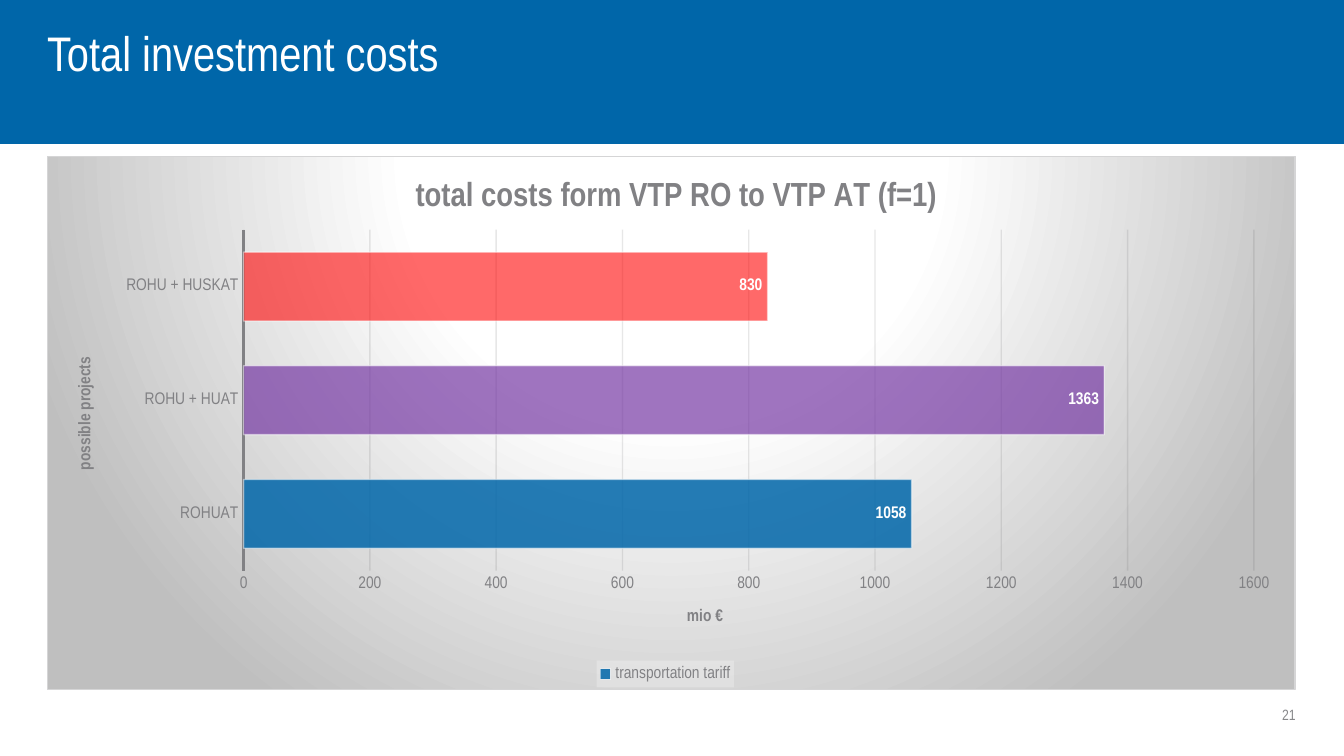
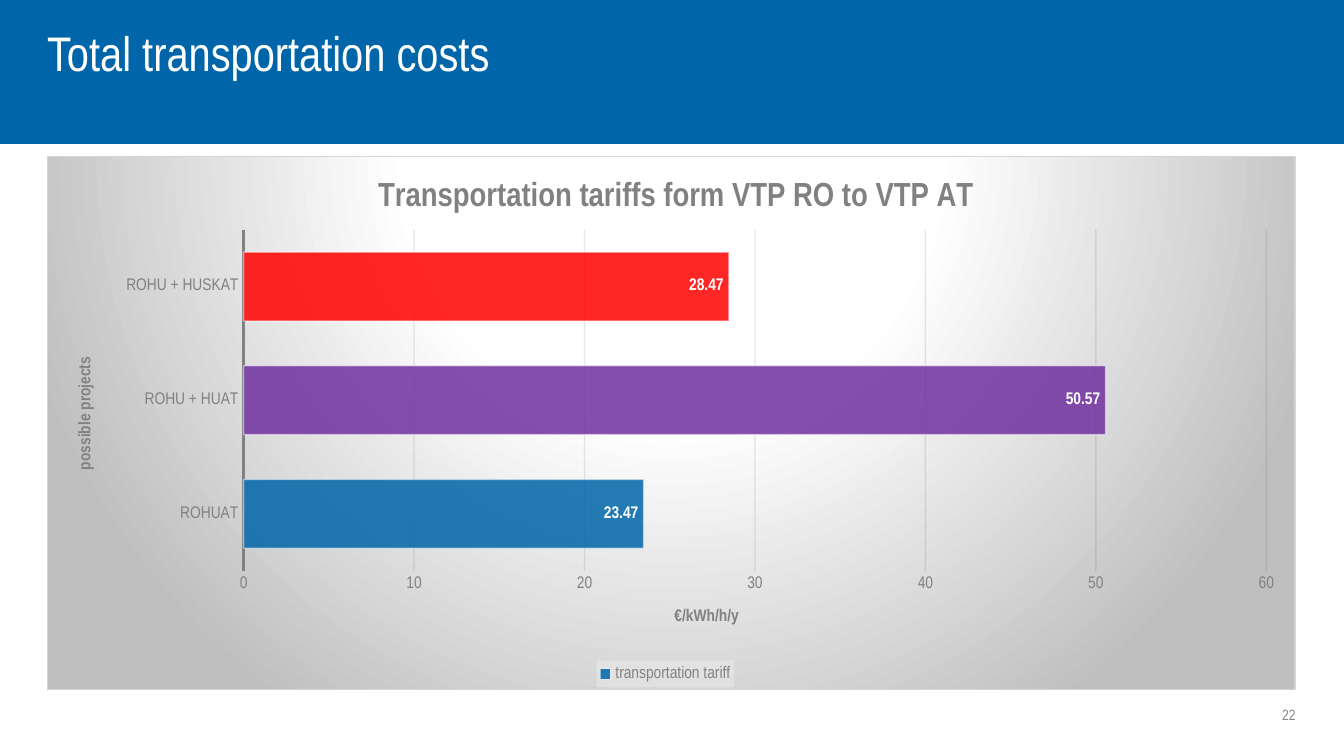
from dataclasses import dataclass
from typing import Any

from lxml import etree
from pptx import Presentation
from pptx import util as u
from pptx.chart import data as chart_data
from pptx.dml.color import RGBColor
from pptx.enum import chart as charts, shapes, text
from pptx.oxml import parse_xml
from pptx.oxml.ns import nsdecls, qn

COLOURS = {
    "blue": "0066A9", "purple": "7030A0", "red": "FF0000", "white": "FFFFFF",
    "number": "87888A", "chart text": "58585A", "label": "818184",
    "grid": "606062", "border": "D5D5D6", "shade": "BFBFBF", "legend": "F2F2F2",
}
FONT = "Arial Narrow"
PROJECTS = ("ROHUAT", "ROHU + HUAT", "ROHU + HUSKAT")
FIRST_NUMBER = 21
MARGIN, CONTENT_WIDTH = u.Cm(0.89), u.Cm(23.6)
FRAME = {"word_wrap": True, "vertical_anchor": text.MSO_ANCHOR.MIDDLE,
         "auto_size": text.MSO_AUTO_SIZE.NONE, "margin_left": 0,
         "margin_top": 0, "margin_right": 0, "margin_bottom": 0}


@dataclass
class Bar:
    value: float
    colour: str
    opacity: int


@dataclass
class CostSlide:
    title: str
    heading: str
    heading_left: float
    unit: str
    unit_left: float
    bars: tuple[Bar, ...]
    axis_max: int
    axis_step: int
    plot_width: float


COST_SLIDES = (
    CostSlide("Total investment costs", "total costs form VTP RO to VTP AT (f=1)", 0.29,
              "mio €", 0.51,
              (Bar(1058, "blue", 85), Bar(1363, "purple", 67), Bar(830, "red", 59)),
              1600, 200, 0.81),
    CostSlide("Total transportation costs", "Transportation tariffs form VTP RO to VTP AT", 0.26,
              "€/kWh/h/y", 0.5,
              (Bar(23.47, "blue", 85), Bar(50.57, "purple", 85), Bar(28.47, "red", 85)),
              60, 10, 0.82),
)


def apply(target: Any, values: dict[str, Any]) -> None:
    for name, value in values.items():
        setattr(target, name, value)


def style_font(font: Any, colour: str, size: float, bold: bool = False) -> None:
    apply(font, {"name": FONT, "size": u.Pt(size), "bold": bold})
    font.color.rgb = RGBColor.from_string(COLOURS[colour])


def paint(fill: Any, colour: str, opacity: int = 100) -> None:
    fill.solid()
    fill.fore_color.rgb = RGBColor.from_string(COLOURS[colour])
    if opacity < 100:
        rgb = fill._xPr.find(qn("a:solidFill"))[0]
        etree.SubElement(rgb, qn("a:alpha")).set("val", str(opacity * 1000))


def paint_line(line: Any, colour: str, width: float, opacity: int = 100) -> None:
    paint(line.fill, colour, opacity)
    line.width = u.Pt(width)


def place(parent: Any, after: str | None, **fractions: float) -> None:
    """Fix a chart part's place, in fractions of the chart's size."""
    for old in parent.findall(qn("c:layout")):
        parent.remove(old)
    layout = etree.Element(qn("c:layout"))
    manual = etree.SubElement(layout, qn("c:manualLayout"))
    settings: dict[str, Any] = {} if after else {"layoutTarget": "inner"}
    settings |= {"xMode": "edge", "yMode": "edge"} | fractions
    for name, value in settings.items():
        etree.SubElement(manual, qn(f"c:{name}")).set("val", str(value))
    if after:
        parent.find(qn(after)).addnext(layout)
    else:
        parent.insert(0, layout)


def write_chart_title(title: Any, words: str, size: float, x: float, y: float) -> None:
    title.text_frame.text = words
    style_font(title.text_frame.paragraphs[0].runs[0].font, "label", size, True)
    place(title._element, "c:tx", x=x, y=y)


def shade_background(chart: Any) -> None:
    stops = "".join(
        f'<a:gs pos="{position * 1000}"><a:srgbClr val="{COLOURS[colour]}"/></a:gs>'
        for position, colour in ((0, "white"), (39, "white"), (100, "shade")))
    chart.element.find(qn("c:chart")).addnext(parse_xml(
        f'<c:spPr {nsdecls("c", "a")}><a:gradFill><a:gsLst>{stops}</a:gsLst>'
        '<a:path path="circle">'
        '<a:fillToRect l="50000" t="-80000" r="50000" b="180000"/></a:path></a:gradFill>'
        f'<a:ln w="{u.Pt(0.75)}"><a:solidFill><a:srgbClr val="{COLOURS["border"]}"/>'
        '</a:solidFill></a:ln></c:spPr>'))


def format_axes(chart: Any, content: CostSlide) -> None:
    projects, costs = chart.category_axis, chart.value_axis
    for axis in (projects, costs):
        apply(axis, {"major_tick_mark": charts.XL_TICK_MARK.NONE,
                     "minor_tick_mark": charts.XL_TICK_MARK.NONE})
        style_font(axis.tick_labels.font, "label", 9)
    apply(costs, {"minimum_scale": 0, "maximum_scale": content.axis_max,
                  "major_unit": content.axis_step, "has_major_gridlines": True})
    paint_line(projects.format.line, "label", 1.5)
    costs.format.line.fill.background()
    paint_line(costs.major_gridlines.format.line, "grid", 0.75, 15)
    write_chart_title(projects.axis_title, "possible projects", 9, 0.02, 0.37)
    turned = projects.axis_title.text_frame._txBody.bodyPr
    turned.set("rot", "-5400000")
    turned.set("vert", "horz")
    write_chart_title(costs.axis_title, content.unit, 9, content.unit_left, 0.84)


def format_bars(plot: Any, bars: tuple[Bar, ...]) -> None:
    apply(plot, {"gap_width": 65, "vary_by_categories": False, "has_data_labels": True})
    labels = plot.data_labels
    apply(labels, {"show_value": True, "position": charts.XL_LABEL_POSITION.INSIDE_END})
    style_font(labels.font, "white", 9, True)
    series = plot.series[0]
    series.invert_if_negative = False
    parts = [series] + [series.points[i] for i in range(1, len(bars))]
    for part, bar in zip(parts, bars):
        paint(part.format.fill, bar.colour, bar.opacity)
        paint_line(part.format.line, "white", 0.75, 50)


def format_legend(chart: Any) -> None:
    chart.has_legend = True
    legend = chart.legend
    apply(legend, {"position": charts.XL_LEGEND_POSITION.BOTTOM, "include_in_layout": False})
    style_font(legend.font, "label", 9)
    place(legend._element, "c:legendPos", x=0.44, y=0.95, w=0.11, h=0.05)
    legend._element.find(qn("c:txPr")).addprevious(parse_xml(
        f'<c:spPr {nsdecls("c", "a")}><a:solidFill><a:srgbClr val="{COLOURS["legend"]}">'
        '<a:alpha val="39000"/></a:srgbClr></a:solidFill></c:spPr>'))


def add_cost_chart(slide: Any, content: CostSlide) -> None:
    costs = chart_data.CategoryChartData()
    costs.categories = PROJECTS
    costs.add_series("transportation tariff", [bar.value for bar in content.bars])
    chart = slide.shapes.add_chart(
        charts.XL_CHART_TYPE.BAR_CLUSTERED, MARGIN, u.Cm(2.95),
        CONTENT_WIDTH, u.Cm(10.1), costs).chart
    style_font(chart.font, "chart text", 10)
    shade_background(chart)
    write_chart_title(chart.chart_title, content.heading, 18, content.heading_left, 0.03)
    format_axes(chart, content)
    format_bars(chart.plots[0], content.bars)
    format_legend(chart)
    place(chart.element.find(qn("c:chart")).find(qn("c:plotArea")), None,
          x=0.157, y=0.137, w=content.plot_width, h=0.64)


def add_band(slide: Any, width: int) -> None:
    """Draw the blue title band once, on the layout the slides share."""
    band = slide.shapes.add_shape(shapes.MSO_SHAPE.RECTANGLE, 0, 0, width, u.Cm(2.7))
    band.shadow.inherit = False
    paint(band.fill, "blue")
    paint_line(band.line, "blue", 1)
    slide.slide_layout.shapes._spTree.insert(2, band._element)


def write_title(slide: Any, words: str) -> None:
    title = slide.shapes.title
    apply(title, {"left": MARGIN, "top": u.Cm(0.53),
                  "width": u.Cm(18.5), "height": u.Cm(1)})
    apply(title.text_frame, FRAME | {"margin_bottom": u.Cm(0.1)})
    title.text_frame.text = words
    heading = title.text_frame.paragraphs[0]
    heading.alignment = text.PP_ALIGN.LEFT
    style_font(heading.runs[0].font, "white", 26)


def add_page_number(slide: Any, number: int) -> None:
    width = u.Cm(3)
    frame = slide.shapes.add_textbox(
        MARGIN + CONTENT_WIDTH - width, u.Cm(13.26), width, u.Cm(0.5)).text_frame
    apply(frame, FRAME)
    frame.text = str(number)
    line = frame.paragraphs[0]
    line.alignment = text.PP_ALIGN.RIGHT
    style_font(line.runs[0].font, "number", 8)


def main() -> None:
    deck = Presentation()
    apply(deck, {"slide_width": u.Cm(25.4), "slide_height": u.Cm(14.29)})
    title_only = deck.slide_layouts.get_by_name("Title Only")
    for number, content in enumerate(COST_SLIDES, FIRST_NUMBER):
        slide = deck.slides.add_slide(title_only)
        if number == FIRST_NUMBER:
            add_band(slide, deck.slide_width)
        write_title(slide, content.title)
        add_page_number(slide, number)
        add_cost_chart(slide, content)
    deck.save("out.pptx")


if __name__ == "__main__":
    main()
